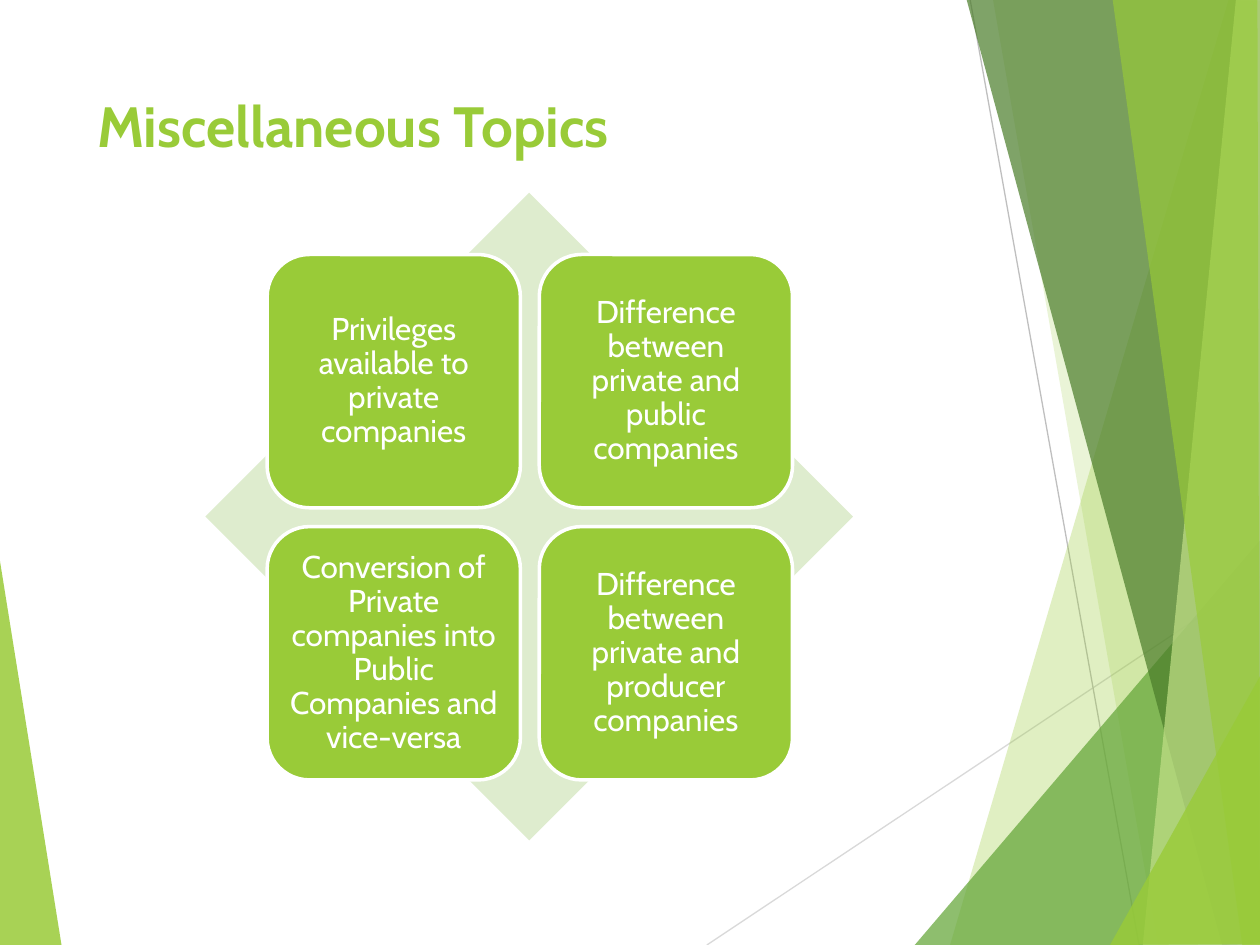
from lxml import etree
from pptx import Presentation
from pptx.dml.color import RGBColor
from pptx.enum import shapes, text
from pptx.oxml.ns import qn
from pptx.util import Inches, Pt

LIME = RGBColor(0x99, 0xCB, 0x38)
GREEN = RGBColor(0x63, 0xA5, 0x37)
DARK_GREEN = RGBColor(0x4A, 0x7C, 0x29)
PALE_LIME = RGBColor(0xC2, 0xE0, 0x88)
PALE_GREEN = RGBColor(0xDE, 0xEC, 0xCE)
LIGHT_GREY = RGBColor(0xD9, 0xD9, 0xD9)
GREY = RGBColor(0xBF, 0xBF, 0xBF)
WHITE = RGBColor(0xFF, 0xFF, 0xFF)
FONT = "Cabin"

# Corner points, colour and opacity in percent
LEFT_FACET = ([(-0.01, 4.39), (0.49, 7.51), (-0.01, 7.5)], LIME, 85)
RIGHT_FACETS = [
    ([(9.75, 0), (7.54, 7.5), (10.02, 7.51), (10.01, 0.01)], LIME, 30),
    ([(7.88, -0.01), (9.19, 7.5), (10.01, 7.5), (10.01, -0.01)], LIME, 20),
    ([(7.26, 7.5), (10, 4.29), (10.01, 7.5)], GREEN, 72),
    ([(7.67, -0.01), (9.7, 7.5), (10.01, 7.49), (10.01, -0.01)], DARK_GREEN, 70),
    ([(9.81, -0.01), (9.07, 7.5), (10.01, 7.5), (10, -0.01)], PALE_LIME, 70),
    ([(8.83, -0.01), (9.86, 7.5), (10, 7.5), (9.98, -0.01)], LIME, 65),
    ([(8.81, 7.5), (10.01, 5.35), (10.01, 7.49)], LIME, 80),
]

TOPICS = [
    "Privileges available to private companies",
    "Difference between private and public companies",
    "Conversion of Private companies into Public Companies and vice-versa",
    "Difference between private and producer companies",
]


def paint(shape, color):
    shape.shadow.inherit = False
    shape.fill.solid()
    shape.fill.fore_color.rgb = color
    shape.line.fill.background()


def style_text(para, size, color, bold=False):
    for span in para.runs:
        span.font.name = FONT
        span.font.size = Pt(size)
        span.font.bold = bold
        span.font.color.rgb = color


def add_facet(page, points, color, opacity):
    corners = [(Inches(x), Inches(y)) for x, y in points]
    builder = page.shapes.build_freeform(*corners[0])
    builder.add_line_segments(corners[1:], close=True)
    facet = builder.convert_to_shape()
    paint(facet, color)
    fill_color = facet.fill._xPr.find(qn("a:solidFill"))[0]
    etree.SubElement(fill_color, qn("a:alpha"), val=str(opacity * 1000))


def add_thin_line(page, x1, y1, x2, y2, color):
    line = page.shapes.add_connector(
        shapes.MSO_CONNECTOR.STRAIGHT, Inches(x1), Inches(y1), Inches(x2), Inches(y2))
    line.line.color.rgb = color
    line.line.width = Pt(0.75)
    etree.SubElement(line._element.spPr, qn("a:effectLst"))


def set_title(page, title_text):
    title = page.shapes.title
    title.left, title.top = Inches(0.67), Inches(0.67)
    title.width, title.height = Inches(6.94), Inches(0.53)
    frame = title.text_frame
    frame.text = title_text
    frame.auto_size = text.MSO_AUTO_SIZE.NONE
    frame.vertical_anchor = text.MSO_ANCHOR.TOP
    para = frame.paragraphs[0]
    para.alignment = text.PP_ALIGN.LEFT
    style_text(para, 32.4, LIME, bold=True)


def add_topic_box(page, left, top, size, topic):
    box = page.shapes.add_shape(
        shapes.MSO_SHAPE.ROUNDED_RECTANGLE,
        Inches(left), Inches(top), Inches(size), Inches(size))
    paint(box, LIME)
    box.line.color.rgb = WHITE
    box.line.width = Pt(2)
    frame = box.text_frame
    frame.text = topic
    frame.word_wrap = True
    frame.vertical_anchor = text.MSO_ANCHOR.MIDDLE
    frame.margin_left = frame.margin_right = Inches(0.07)
    frame.margin_top = frame.margin_bottom = Inches(0.07)
    para = frame.paragraphs[0]
    para.alignment = text.PP_ALIGN.CENTER
    para.line_spacing = 0.9
    style_text(para, 18, WHITE)


def add_topic_matrix(page):
    diamond = page.shapes.add_shape(
        shapes.MSO_SHAPE.DIAMOND, Inches(1.63), Inches(1.53), Inches(5.14), Inches(5.14))
    paint(diamond, PALE_GREEN)
    left, top, size, step = 2.12, 2.02, 2.01, 2.16
    for index, topic in enumerate(TOPICS):
        row, column = divmod(index, 2)
        add_topic_box(page, left + column * step, top + row * step, size, topic)


def main():
    deck = Presentation()
    deck.slide_width, deck.slide_height = Inches(10), Inches(7.5)
    page = deck.slides.add_slide(deck.slide_layouts[5])

    # Background decoration
    add_facet(page, *LEFT_FACET)
    add_thin_line(page, 5.61, 7.5, 10.01, 4.57, LIGHT_GREY)
    add_thin_line(page, 7.7, 0, 9.04, 7.5, GREY)
    for facet in RIGHT_FACETS:
        add_facet(page, *facet)

    # Content
    set_title(page, "Miscellaneous Topics")
    add_topic_matrix(page)
    deck.save("out.pptx")


if __name__ == "__main__":
    main()
